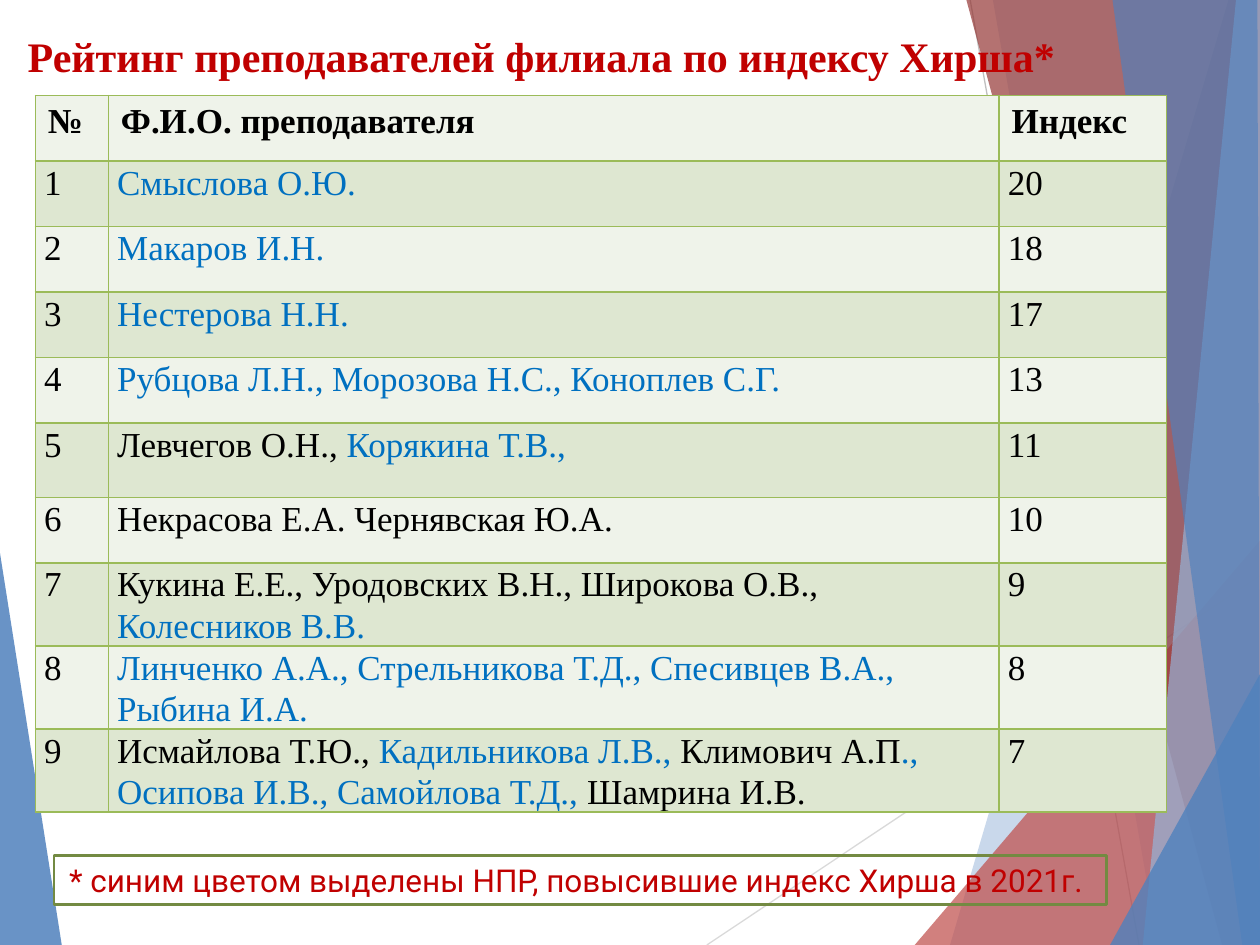
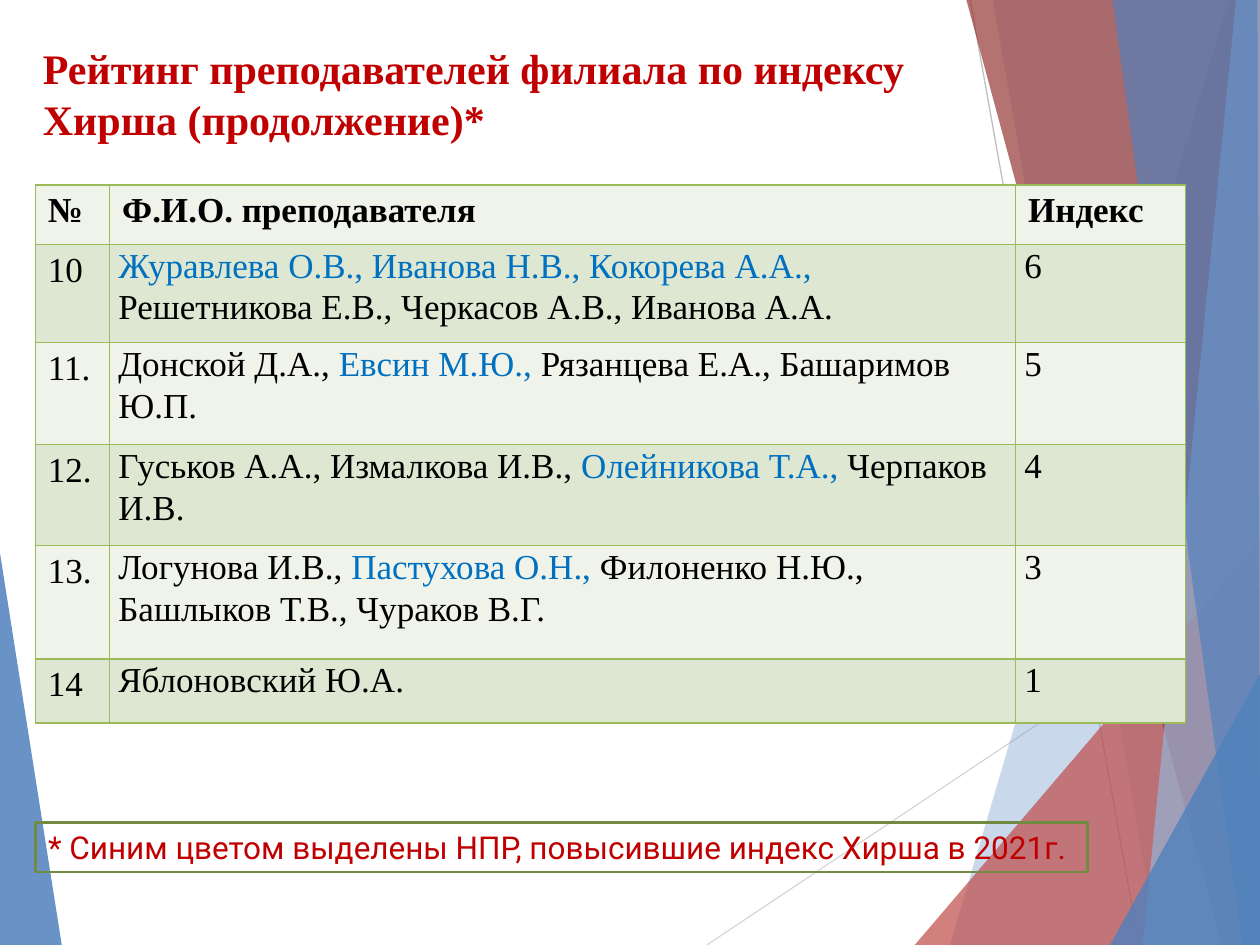
from lxml.etree import SubElement
from pptx import Presentation
from pptx.dml.color import RGBColor
from pptx.enum.shapes import MSO_CONNECTOR, MSO_SHAPE
from pptx.enum.text import MSO_ANCHOR, MSO_AUTO_SIZE, PP_ALIGN
from pptx.oxml.ns import qn
from pptx.util import Inches, Pt

COLOURS = {
    "title": "C00000", "text": "000000", "raised": "0070C0",
    "row_light": "EFF3EA", "row_dark": "DEE7D1", "grid": "9BBB59",
    "note_frame": "738A42", "blue": "4F81BD", "pale_blue": "95B3D7",
    "red": "C0504D", "dark_red": "953735",
    "ray_light": "D9D9D9", "ray_dark": "BFBFBF",
}
TITLE_FONT = TABLE_FONT = "Times New Roman"
NOTE_FONT = "Roboto"

# Facets from back to front: colour, opacity in percent, corners
LEFT_FACET = ("blue", 85, [(0, 4.39), (0.49, 7.5), (0, 7.5)])
RIGHT_FACETS = [
    ("blue", 30, [(9.75, 0), (7.54, 7.5), (10, 7.5), (10, 0)]),
    ("blue", 20, [(7.88, 0), (9.19, 7.5), (10, 7.5), (10, 0)]),
    ("red", 72, [(7.26, 7.5), (10, 4.29), (10, 7.5)]),
    ("dark_red", 70, [(7.67, 0), (9.7, 7.5), (10, 7.5), (10, 0)]),
    ("pale_blue", 70, [(9.81, 0), (9.07, 7.5), (10, 7.5), (10, 0)]),
    ("blue", 65, [(8.83, 0), (9.86, 7.5), (10, 7.5), (9.98, 0)]),
    ("blue", 80, [(8.81, 7.5), (10, 5.35), (10, 7.5)]),
]
RAYS = [("ray_light", (5.61, 7.5), (10, 4.57)), ("ray_dark", (7.7, 0), (9.04, 7.5))]

# In the names column, the parts between bars belong to teachers whose index rose
HEADER = ("№", "Ф.И.О. преподавателя", "Индекс")
SLIDES = [
    {
        "title": "Рейтинг преподавателей филиала по индексу Хирша*",
        "title_at": (0.12, 0.19, 8.74, 0.8),
        "table_at": (0.28, 0.76),
        "widths": (0.58, 7.07, 1.33),
        "heights": [0.52] * 5 + [0.59] + [0.52] * 4,
        "tight_columns": (0, 1, 2),
        "rows": [
            ("1", "|Смыслова О.Ю.|", "20"),
            ("2", "|Макаров И.Н.|", "18"),
            ("3", "|Нестерова Н.Н.|", "17"),
            ("4", "|Рубцова Л.Н., Морозова Н.С., Коноплев С.Г.|", "13"),
            ("5", "Левчегов О.Н., |Корякина Т.В.,|", "11"),
            ("6", "Некрасова Е.А. Чернявская Ю.А.", "10"),
            ("7", "Кукина Е.Е., Уродовских В.Н., Широкова О.В., |Колесников В.В.|", "9"),
            ("8", "|Линченко А.А., Стрельникова Т.Д., Спесивцев В.А., Рыбина И.А.|", "8"),
            ("9", "Исмайлова Т.Ю., |Кадильникова Л.В., |Климович А.П"
                  "|., Осипова И.В., Самойлова Т.Д., |Шамрина И.В.", "7"),
        ],
        "note": "* синим цветом выделены НПР, повысившие индекс Хирша в 2021г. ",
        "note_at": (0.43, 6.79, 8.35, 0.39),
    },
    {
        "title": "Рейтинг преподавателей филиала по индексу Хирша (продолжение)*",
        "title_at": (0.24, 0.29, 7.44, 1.02),
        "table_at": (0.28, 1.47),
        "widths": (0.59, 7.19, 1.35),
        "heights": [0.47, 0.78, 0.81, 0.8, 0.9, 0.51],
        "tight_columns": (1, 2),
        "rows": [
            ("10", "|Журавлева О.В., Иванова Н.В., Кокорева А.А., |"
                   "Решетникова Е.В., Черкасов А.В., Иванова А.А.", "6"),
            ("11.", "Донской Д.А., |Евсин М.Ю., |Рязанцева Е.А., Башаримов Ю.П.", "5"),
            ("12.", "Гуськов А.А., Измалкова И.В., |Олейникова Т.А.,| Черпаков И.В.", "4"),
            ("13.", "Логунова И.В., |Пастухова О.Н., |"
                    "Филоненко Н.Ю., Башлыков Т.В., Чураков В.Г.", "3"),
            ("14", "Яблоновский Ю.А.", "1"),
        ],
        "note": "* Синим цветом выделены НПР, повысившие индекс Хирша в 2021г. ",
        "note_at": (0.28, 6.53, 8.35, 0.39),
    },
]


def rgb(name):
    return RGBColor.from_string(COLOURS[name])


def add_span(para, text, font, size, colour, bold=False):
    span = para.add_run()
    span.text = text
    span.font.name = font
    span.font.size = Pt(size)
    span.font.bold = bold
    span.font.color.rgb = rgb(colour)


deck = Presentation()
deck.slide_width, deck.slide_height = Inches(10), Inches(7.5)
layout = deck.slide_layouts[5]
pages = [deck.slides.add_slide(layout) for _ in SLIDES]

# Backdrop: drawn on the first page, then moved to the layout that all pages share
drawing = pages[0].shapes
backdrop = []
for colour, opacity, corners in [LEFT_FACET, *RIGHT_FACETS]:
    points = [(Inches(x), Inches(y)) for x, y in corners]
    builder = drawing.build_freeform(*points[0], scale=1.0)
    builder.add_line_segments(points[1:], close=True)
    facet = builder.convert_to_shape()
    facet.shadow.inherit = False
    facet.line.fill.background()
    facet.fill.solid()
    facet.fill.fore_color.rgb = rgb(colour)
    tint = facet.element.spPr.find(qn("a:solidFill"))[0]
    SubElement(tint, qn("a:alpha"), val=str(opacity * 1000))
    backdrop.append(facet)

rays = []
for colour, start, end in RAYS:
    ray = drawing.add_connector(MSO_CONNECTOR.STRAIGHT, *map(Inches, start + end))
    ray.line.color.rgb = rgb(colour)
    ray.line.width = Pt(0.75)
    SubElement(ray.element.spPr, qn("a:effectLst"))
    rays.append(ray)
backdrop[1:1] = rays

layout_tree = layout.shapes.element
for order, shape in enumerate(backdrop):
    shape.element.xpath(".//p:cNvPr")[0].set("id", str(100 + order))
    layout_tree.insert(2 + order, shape.element)

for page, content in zip(pages, SLIDES):
    title = page.shapes.title
    title.left, title.top, title.width, title.height = map(Inches, content["title_at"])
    frame = title.text_frame
    frame.word_wrap = True
    frame.auto_size = MSO_AUTO_SIZE.NONE
    frame.vertical_anchor = MSO_ANCHOR.TOP
    frame.paragraphs[0].alignment = PP_ALIGN.LEFT
    add_span(frame.paragraphs[0], content["title"], TITLE_FONT, 24, "title", bold=True)

    rows = [HEADER, *content["rows"]]
    widths, heights = content["widths"], content["heights"]
    table = page.shapes.add_table(
        len(rows), len(HEADER), *map(Inches, content["table_at"]),
        Inches(sum(widths)), Inches(sum(heights))).table
    for column, width in zip(table.columns, widths):
        column.width = Inches(width)
    for row, height in zip(table.rows, heights):
        row.height = Inches(height)

    for row_index, values in enumerate(rows):
        is_header = row_index == 0
        for column_index, value in enumerate(values):
            cell = table.cell(row_index, column_index)
            properties = cell._tc.get_or_add_tcPr()
            for side in ("a:lnL", "a:lnR", "a:lnT", "a:lnB"):
                border = SubElement(properties, qn(side), w=str(Pt(1)))
                border_fill = SubElement(border, qn("a:solidFill"))
                SubElement(border_fill, qn("a:srgbClr"), val=COLOURS["grid"])
            cell.fill.solid()
            cell.fill.fore_color.rgb = rgb("row_dark" if row_index % 2 else "row_light")
            para = cell.text_frame.paragraphs[0]
            if not is_header and column_index in content["tight_columns"]:
                cell.margin_left = cell.margin_right = Inches(0.07)
                cell.margin_top = cell.margin_bottom = 0
                para.line_spacing = 1.07
            for part_index, part in enumerate(value.split("|")):
                if part:
                    colour = "raised" if part_index % 2 else "text"
                    add_span(para, part, TABLE_FONT, 20, colour, bold=is_header)

    note = page.shapes.add_shape(MSO_SHAPE.RECTANGLE, *map(Inches, content["note_at"]))
    note.shadow.inherit = False
    note.fill.background()
    note.line.color.rgb = rgb("note_frame")
    note.line.width = Pt(1.5)
    note.text_frame.word_wrap = True
    note.text_frame.vertical_anchor = MSO_ANCHOR.MIDDLE
    para = note.text_frame.paragraphs[0]
    para.alignment = PP_ALIGN.CENTER
    add_span(para, content["note"], NOTE_FONT, 18, "title")

deck.save("out.pptx")
